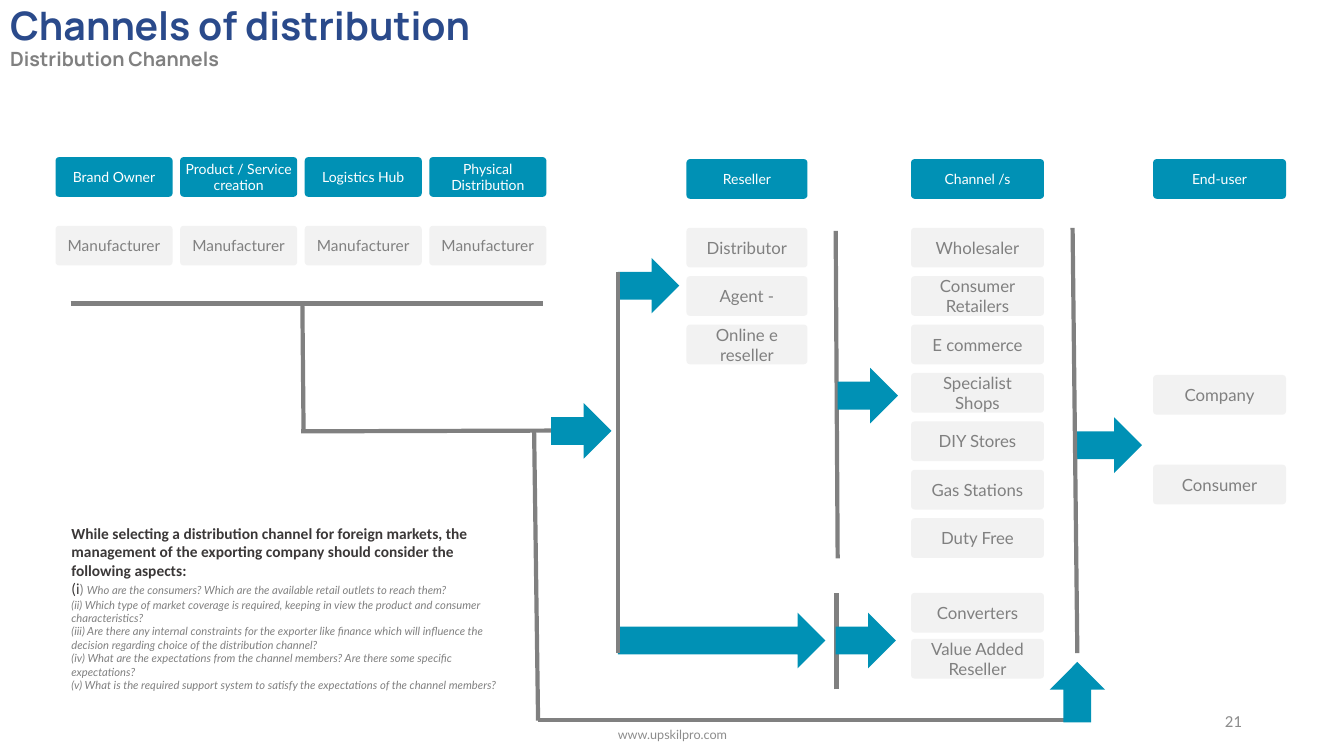
from lxml import etree
from pptx import Presentation, util as u
from pptx.dml.color import RGBColor
from pptx.enum import shapes, text
from pptx.oxml.ns import qn

COLOURS = {
    "navy": "2A4A8B", "teal": "0091B5", "pale": "F2F2F2", "grey": "808080",
    "dark": "3B3838", "footer": "8C8C8C", "white": "FFFFFF",
}
CARD_HEIGHT = 1.0
ARROW_HEIGHT = 1.4
CARD_STEP = 1.22

STAGES = ["Brand Owner", "Product / Service creation", "Logistics Hub", "Physical Distribution"]
COLUMNS = [
    ("Reseller", 17.3, 3.05, [(5.74, CARD_STEP, ["Distributor", "Agent -", "Online e reseller"])]),
    ("Channel /s", 22.96, 3.35, [
        (5.74, CARD_STEP, ["Wholesaler", "Consumer Retailers", "E commerce", "Specialist Shops",
                           "DIY Stores", "Gas Stations", "Duty Free"]),
        (14.94, 1.16, ["Converters", "Value Added Reseller"]),
    ]),
    ("End-user", 29.06, 3.35, [(9.45, 2.26, ["Company", "Consumer"])]),
]
BACK_ARROWS = [(15.57, 15.44, 5.23), (15.57, 6.5, 1.55), (27.1, 10.52, 1.68)]
FRONT_ARROWS = [(21.11, 9.27, 1.52), (21.06, 15.44, 1.52), (13.89, 10.16, 1.52),
                (26.39, 16.74, 1.52, 270)]
LINES = [
    (15.57, 16.46, 15.57, 6.86), (27.15, 16.46, 27.03, 5.74),
    (21.11, 14.07, 21.06, 5.82), (21.08, 17.37, 21.08, 14.94),
    (7.65, 10.85, 7.62, 7.65), (7.59, 10.87, 13.89, 10.85),
    (1.78, 7.65, 13.69, 7.65), (13.56, 18.14, 27.15, 18.14),
    (13.56, 18.16, 13.46, 10.85),
]
SMALL = (8, "Lato", "grey", False, True)
ASPECTS = [
    [("While selecting a distribution channel for foreign markets, the management of the "
      "exporting company should consider the following aspects:",
      (11, "Calibri", "dark", True, False))],
    [("(i", (11, "Calibri", "dark", False, False)),
     (") ", (10, "Calibri", "grey", False, False)),
     ("Who are the consumers? Which are the available retail outlets to reach them?", SMALL)],
    [("(ii) Which type of market coverage is required, keeping in view the product and "
      "consumer characteristics?", SMALL)],
    [("(iii) Are there any internal constraints for the exporter like finance which will "
      "influence the decision regarding choice of the distribution channel?", SMALL)],
    [("(iv) What are the expectations from the channel members? Are there some specific "
      "expectations?", SMALL)],
    [("(v) What is the required support system to satisfy the expectations of the channel "
      "members?", SMALL)],
]


class Painter:
    """Draws the elements of a channel diagram on one page."""

    def __init__(self, page):
        self.page = page

    def colour(self, name):
        return RGBColor.from_string(COLOURS[name])

    def style(self, span, size, face, colour, bold=False, italic=False):
        span.font.size = u.Pt(size)
        span.font.name = face
        span.font.color.rgb = self.colour(colour)
        span.font.bold = bold
        span.font.italic = italic

    def title(self, heading, subheading):
        box = self.page.shapes.title
        box.left, box.top, box.width, box.height = map(u.Cm, (0, 0.05, 15.93, 2.06))
        frame = box.text_frame
        frame.text = f"{heading}\n{subheading}"
        frame.auto_size = text.MSO_AUTO_SIZE.NONE
        frame.vertical_anchor = text.MSO_ANCHOR.TOP
        for para, size, colour in zip(frame.paragraphs, (28, 14), ("navy", "grey")):
            para.alignment = text.PP_ALIGN.LEFT
            para.line_spacing = 0.9
            para.space_before = u.Pt(0)
            self.style(para.runs[0], size, "Manrope", colour, bold=True)

    def shape(self, kind, left, top, width, height, fill):
        shape = self.page.shapes.add_shape(kind, *map(u.Cm, (left, top, width, height)))
        shape.shadow.inherit = False
        shape.fill.solid()
        shape.fill.fore_color.rgb = self.colour(fill)
        shape.line.fill.background()
        return shape

    def card(self, label, left, top, width, size, header=False):
        card = self.shape(shapes.MSO_SHAPE.ROUNDED_RECTANGLE, left, top, width, CARD_HEIGHT,
                          "teal" if header else "pale")
        card.adjustments[0] = 0.09
        frame = card.text_frame
        frame.text = label
        frame.word_wrap = True
        frame.vertical_anchor = text.MSO_ANCHOR.MIDDLE
        if header:
            frame.margin_left = frame.margin_right = frame.margin_top = frame.margin_bottom = 0
        para = frame.paragraphs[0]
        para.alignment = text.PP_ALIGN.CENTER
        self.style(para.runs[0], size, "Lato", "white" if header else "grey")

    def arrow(self, left, top, width, rotation=0):
        arrow = self.shape(shapes.MSO_SHAPE.RIGHT_ARROW, left, top, width, ARROW_HEIGHT, "teal")
        arrow.rotation = rotation

    def line(self, *ends):
        line = self.page.shapes.add_connector(shapes.MSO_CONNECTOR.STRAIGHT, *map(u.Cm, ends))
        line.line.color.rgb = self.colour("grey")
        line.line.width = u.Pt(3)
        etree.SubElement(line._element.spPr, qn("a:effectLst"))

    def note(self, paragraphs, left, top, width, height,
             align=text.PP_ALIGN.LEFT, anchor=text.MSO_ANCHOR.TOP):
        box = self.page.shapes.add_textbox(*map(u.Cm, (left, top, width, height)))
        frame = box.text_frame
        frame.word_wrap = True
        frame.vertical_anchor = anchor
        for index, spans in enumerate(paragraphs):
            para = frame.add_paragraph() if index else frame.paragraphs[0]
            para.alignment = align
            for words, look in spans:
                span = para.add_run()
                span.text = words
                self.style(span, *look)


def main():
    deck = Presentation()
    deck.slide_width, deck.slide_height = u.Cm(33.87), u.Cm(19.05)
    painter = Painter(deck.slides.add_slide(deck.slide_layouts[5]))
    painter.title("Channels of distribution", "Distribution Channels")

    for index, stage in enumerate(STAGES):
        left = 1.4 + index * 3.14
        painter.card(stage, left, 3.96, 2.95, 10, header=True)
        painter.card("Manufacturer", left, 5.69, 2.95, 11)
    for header, left, width, groups in COLUMNS:
        painter.card(header, left, 4.01, width, 10, header=True)
        for top, step, labels in groups:
            for index, label in enumerate(labels):
                painter.card(label, left, top + index * step, width, 12)

    painter.note(ASPECTS, 1.55, 13.08, 11.56, 4.88)
    for arrow in BACK_ARROWS:
        painter.arrow(*arrow)
    for line in LINES:
        painter.line(*line)
    for arrow in FRONT_ARROWS:
        painter.arrow(*arrow)

    middle = text.MSO_ANCHOR.MIDDLE
    painter.note([[("21", (12, "Calibri", "footer"))]], 23.93, 17.65, 7.62, 1.02,
                 text.PP_ALIGN.RIGHT, middle)
    painter.note([[("www.upskilpro.com", (9, "Lato", "footer"))]], 11.23, 18.01, 11.43, 1.02,
                 text.PP_ALIGN.CENTER, middle)
    deck.save("out.pptx")


if __name__ == "__main__":
    main()
